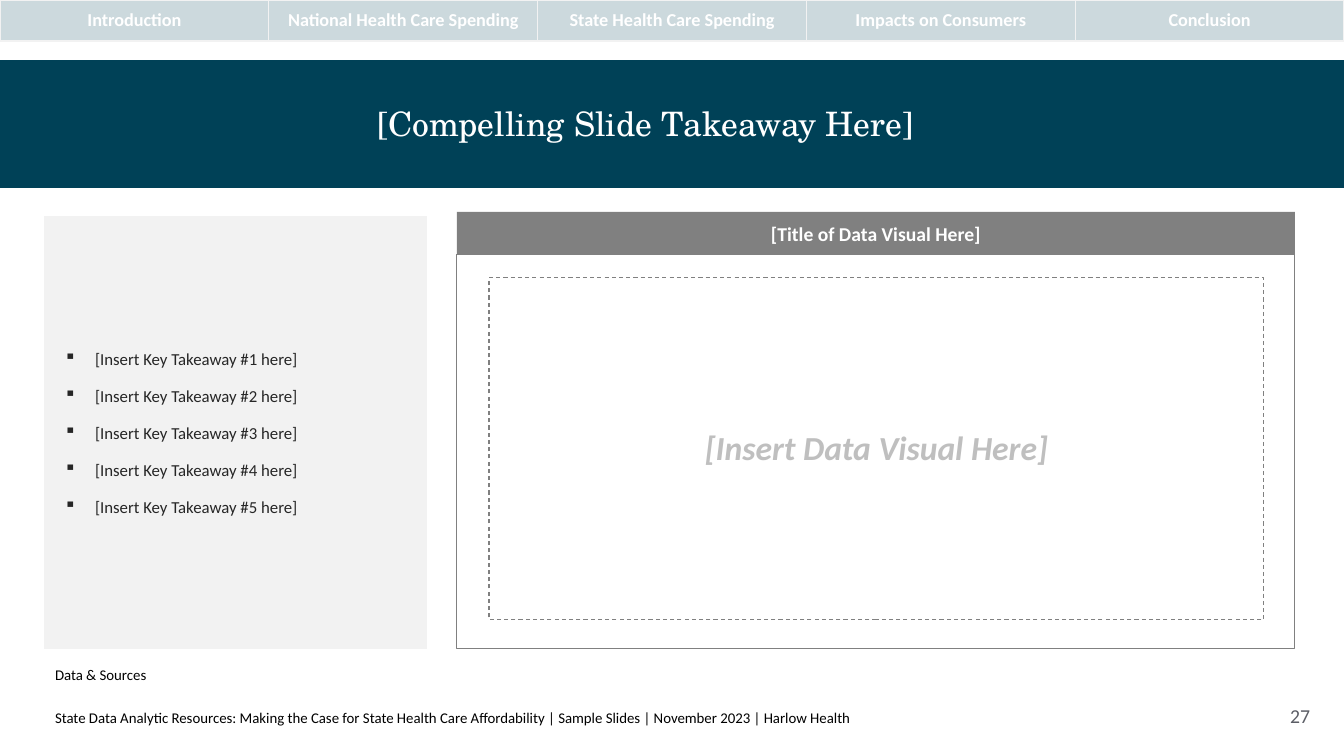
from lxml.etree import SubElement
from pptx import Presentation
from pptx.dml.color import RGBColor
from pptx.enum.dml import MSO_LINE
from pptx.enum.shapes import MSO_SHAPE as Shape
from pptx.enum.text import MSO_ANCHOR as Anchor, PP_ALIGN as Align
from pptx.oxml import parse_xml
from pptx.oxml.ns import nsdecls, qn
from pptx.util import Pt

# Content
SECTIONS = ["Introduction", "National Health Care Spending", "State Health Care Spending",
            "Impacts on Consumers", "Conclusion"]
TITLE = "[Compelling Slide Takeaway Here]"
TAKEAWAYS = [f"[Insert Key Takeaway #{number} here]" for number in range(1, 6)]
VISUAL_TITLE = "[Title of Data Visual Here]"
VISUAL_PROMPT = "[Insert Data Visual Here]"
SOURCES = "Data & Sources"
FOOTER = ("State Data Analytic Resources: Making the Case for State Health Care Affordability"
          " | Sample Slides | November 2023 | Harlow Health")
PAGE_NUMBER = "27"

COLORS = {"navy": "004157", "tab": "CCD9DD", "pale": "F2F2F2", "gray": "808080",
          "white": "FFFFFF", "black": "000000", "text": "262626", "prompt": "BFBFBF",
          "number": "5C5E66"}
BODY_FONT, TITLE_FONT = "Calibri", "TeX Gyre Schola"

# Layout in px
WIDTH, HEIGHT = 1344, 756
LEFT = 44
NAV_HEIGHT = 41
PANEL_BOTTOM = 649
VISUAL_LEFT, VISUAL_TOP, VISUAL_WIDTH, HEADER_HEIGHT = 457, 212, 838, 43
FRAME_TOP = VISUAL_TOP + HEADER_HEIGHT
PANEL_INSETS = (20, 20, 20, 20)
TEXT_INSETS = (11, 6, 11, 6)


def px(value):
    return round(value * 914400 / 100.8)


def rgb(name):
    return RGBColor.from_string(COLORS[name])


def write(frame, lines, size, color, font=BODY_FONT, bold=False, italic=False,
          align=Align.LEFT, anchor=Anchor.MIDDLE, insets=None, wrap=True,
          before=0, after=0, spacing=None, bullet=None, indent=31):
    frame.word_wrap = wrap
    frame.vertical_anchor = anchor
    if insets:
        (frame.margin_left, frame.margin_top,
         frame.margin_right, frame.margin_bottom) = map(px, insets)
    for index, line in enumerate(lines):
        paragraph = frame.paragraphs[0] if index == 0 else frame.add_paragraph()
        paragraph.alignment = align
        paragraph.space_before, paragraph.space_after = Pt(before), Pt(after)
        if spacing:
            paragraph.line_spacing = spacing
        if bullet:
            properties = paragraph._p.get_or_add_pPr()
            properties.set("marL", str(px(indent)))
            properties.set("indent", str(-px(indent)))
            SubElement(properties, qn("a:buChar"), char=bullet)
        run = paragraph.add_run()
        run.text = line
        run.font.name, run.font.size = font, Pt(size)
        run.font.bold, run.font.italic = bold, italic
        run.font.color.rgb = rgb(color)


def add_box(slide, left, top, width, height, fill=None, line=None, dash=None):
    shape = slide.shapes.add_shape(Shape.RECTANGLE, px(left), px(top), px(width), px(height))
    shape.shadow.inherit = False
    if fill:
        shape.fill.solid()
        shape.fill.fore_color.rgb = rgb(fill)
    else:
        shape.fill.background()
    if line:
        shape.line.color.rgb = rgb(line)
        shape.line.width = Pt(0.75)
        if dash:
            shape.line.dash_style = dash
    else:
        shape.line.fill.background()
    return shape


def add_text(slide, left, top, width, height, text, **style):
    box = slide.shapes.add_textbox(px(left), px(top), px(width), px(height))
    write(box.text_frame, [text], **style)


def add_navigation(slide):
    table = slide.shapes.add_table(1, len(SECTIONS), 0, 0, px(WIDTH), px(NAV_HEIGHT)).table
    table.first_row = table.horz_banding = False
    for cell, section in zip(table.rows[0].cells, SECTIONS):
        cell.fill.solid()
        cell.fill.fore_color.rgb = rgb("tab")
        cell.vertical_anchor = Anchor.MIDDLE
        write(cell.text_frame, [section], 13, "white", bold=True, align=Align.CENTER)
        properties = cell._tc.get_or_add_tcPr()
        for index, side in enumerate("LRTB"):
            properties.insert(index, parse_xml(
                f'<a:ln{side} {nsdecls("a")} w="{Pt(1)}"><a:solidFill>'
                f'<a:srgbClr val="{COLORS["pale"]}"/></a:solidFill></a:ln{side}>'))


def main():
    presentation = Presentation()
    presentation.slide_width, presentation.slide_height = px(WIDTH), px(HEIGHT)
    slide = presentation.slides.add_slide(presentation.slide_layouts[6])

    # Title band and section navigation
    add_box(slide, 0, 60, WIDTH, 128, fill="navy")
    add_text(slide, LEFT, 95, 1203, 57, TITLE, size=24, color="white", font=TITLE_FONT,
             align=Align.CENTER, insets=TEXT_INSETS)
    add_navigation(slide)

    # Key takeaways
    panel = add_box(slide, LEFT, 216, 383, PANEL_BOTTOM - 216, fill="pale")
    write(panel.text_frame, TAKEAWAYS, 12, "text", insets=PANEL_INSETS, after=12, bullet="▪")

    # Data visual
    header = add_box(slide, VISUAL_LEFT, VISUAL_TOP, VISUAL_WIDTH, HEADER_HEIGHT, fill="gray")
    write(header.text_frame, [VISUAL_TITLE], 14, "white", bold=True, align=Align.CENTER,
          insets=PANEL_INSETS)
    add_box(slide, VISUAL_LEFT, FRAME_TOP, VISUAL_WIDTH, PANEL_BOTTOM - FRAME_TOP, line="gray")
    visual = add_box(slide, 489, 278, 775, 342, fill="white", line="gray", dash=MSO_LINE.DASH)
    write(visual.text_frame, [VISUAL_PROMPT], 24, "prompt", bold=True, italic=True,
          align=Align.CENTER, insets=PANEL_INSETS, spacing=Pt(26))

    # Sources, footer and page number
    add_text(slide, LEFT, 660, 1256, 30, SOURCES, size=10.6, color="black",
             anchor=Anchor.BOTTOM, insets=TEXT_INSETS, before=2.6)
    add_text(slide, LEFT, 708, 897, 22, FOOTER, size=10.6, color="black",
             insets=(11, 0, 0, 0), spacing=0.8)
    add_text(slide, 1278, 687, 44, 57, PAGE_NUMBER, size=14.1, color="number",
             align=Align.CENTER, insets=(0, 0, 0, 0), wrap=False)

    presentation.save("out.pptx")


if __name__ == "__main__":
    main()
